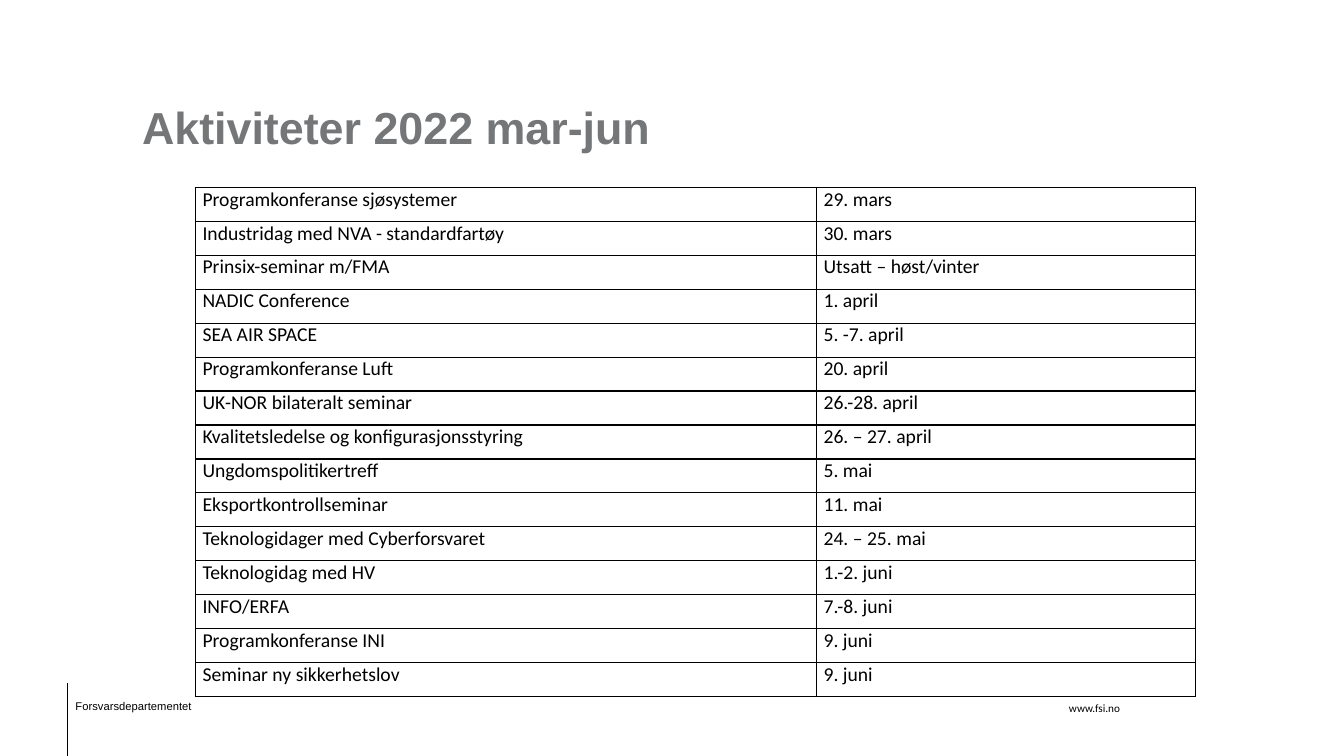
from dataclasses import dataclass
from typing import Optional

from lxml.etree import SubElement
from pptx import Presentation
from pptx.dml.color import RGBColor
from pptx.enum.shapes import MSO_CONNECTOR as Connector
from pptx.enum.text import MSO_ANCHOR as Anchor, PP_ALIGN as Align
from pptx.oxml.ns import qn
from pptx.util import Inches, Pt

COLORS = {"ink": "000000", "heading": "747678"}
WIDTH, HEIGHT = Inches(13.33), Inches(7.5)
ACTIVITY_SHARE, DATE_SHARE, ROW_SHARE = 46.21, 28.21, 4.49


@dataclass(frozen=True)
class Area:
    left: float
    top: float
    width: float
    height: float

    def box(self) -> tuple[int, int, int, int]:
        return across(self.left), down(self.top), across(self.width), down(self.height)


@dataclass(frozen=True)
class Activity:
    title: str
    date: str


@dataclass(frozen=True)
class Label:
    text: str
    area: Area
    size: float
    font: str
    color: str = "ink"
    bold: bool = False
    align: Optional[Align] = None
    anchor: Anchor = Anchor.TOP
    right_inset: float = 0.1


LABELS = [
    Label("Forsvarsdepartementet", Area(4.88, 91.87, 21.23, 3.2), 8, "Arial"),
    Label("Aktiviteter 2022 mar-jun", Area(9.83, 4.27, 80.35, 16.67), 32, "Arial",
          color="heading", bold=True, anchor=Anchor.BOTTOM),
    Label("www.fsi.no", Area(36.68, 92.13, 46.66, 3.2), 8, "Calibri",
          align=Align.RIGHT, right_inset=0),
]

ACTIVITIES = [
    Activity("Programkonferanse sjøsystemer", "29. mars"),
    Activity("Industridag med NVA - standardfartøy", "30. mars"),
    Activity("Prinsix-seminar m/FMA", "Utsatt – høst/vinter"),
    Activity("NADIC Conference", "1. april"),
    Activity("SEA AIR SPACE", "5. -7. april"),
    Activity("Programkonferanse Luft", "20. april"),
    Activity("UK-NOR bilateralt seminar", "26.-28. april"),
    Activity("Kvalitetsledelse og konfigurasjonsstyring", "26. – 27. april"),
    Activity("Ungdomspolitikertreff", "5. mai"),
    Activity("Eksportkontrollseminar", "11. mai"),
    Activity("Teknologidager med Cyberforsvaret", "24. – 25. mai"),
    Activity("Teknologidag med HV", "1.-2. juni"),
    Activity("INFO/ERFA", "7.-8. juni"),
    Activity("Programkonferanse INI", "9. juni"),
    Activity("Seminar ny sikkerhetslov", "9. juni"),
]


def across(percent: float) -> int:
    return round(WIDTH * percent / 100)


def down(percent: float) -> int:
    return round(HEIGHT * percent / 100)


def write(frame, text: str, *, size: float, font: str, color: str = "ink",
          bold: bool = False, align: Optional[Align] = None) -> None:
    frame.word_wrap = True
    paragraph = frame.paragraphs[0]
    paragraph.alignment = align
    run = paragraph.add_run()
    run.text = text
    run.font.size = Pt(size)
    run.font.name = font
    run.font.bold = bold
    run.font.color.rgb = RGBColor.from_string(COLORS[color])


def draw_label(slide, label: Label) -> None:
    frame = slide.shapes.add_textbox(*label.area.box()).text_frame
    frame.vertical_anchor = label.anchor
    frame.margin_right = Inches(label.right_inset)
    write(frame, label.text, size=label.size, font=label.font, color=label.color,
          bold=label.bold, align=label.align)


def draw_footer_rule(slide) -> None:
    x = across(5.03)
    rule = slide.shapes.add_connector(Connector.STRAIGHT, x, down(90.4), x, HEIGHT)
    rule.line.color.rgb = RGBColor.from_string(COLORS["ink"])
    rule.line.width = Pt(0.75)
    SubElement(rule.element.spPr, qn("a:effectLst"))


def add_borders(cell) -> None:
    properties = cell._tc.get_or_add_tcPr()
    for side in ("L", "R", "T", "B"):
        border = SubElement(properties, qn(f"a:ln{side}"), w=str(Pt(1)))
        fill = SubElement(border, qn("a:solidFill"))
        SubElement(fill, qn("a:srgbClr"), val=COLORS["ink"])


def draw_cell(cell, text: str) -> None:
    cell.margin_left = cell.margin_right = Inches(0.07)
    cell.margin_top = cell.margin_bottom = 0
    add_borders(cell)
    cell.fill.background()
    write(cell.text_frame, text, size=14, font="Calibri")


def draw_activities(slide, activities: list[Activity]) -> None:
    area = Area(14.55, 24.8, ACTIVITY_SHARE + DATE_SHARE, ROW_SHARE * len(activities))
    schedule = slide.shapes.add_table(len(activities), 2, *area.box()).table
    schedule.first_row = schedule.horz_banding = False
    for column, share in zip(schedule.columns, (ACTIVITY_SHARE, DATE_SHARE)):
        column.width = across(share)
    for row, activity in zip(schedule.rows, activities):
        row.height = down(ROW_SHARE)
        for cell, text in zip(row.cells, (activity.title, activity.date)):
            draw_cell(cell, text)


def main() -> None:
    deck = Presentation()
    deck.slide_width, deck.slide_height = WIDTH, HEIGHT
    slide = deck.slides.add_slide(deck.slide_layouts[6])
    draw_footer_rule(slide)
    for label in LABELS:
        draw_label(slide, label)
    draw_activities(slide, ACTIVITIES)
    deck.save("out.pptx")


if __name__ == "__main__":
    main()
